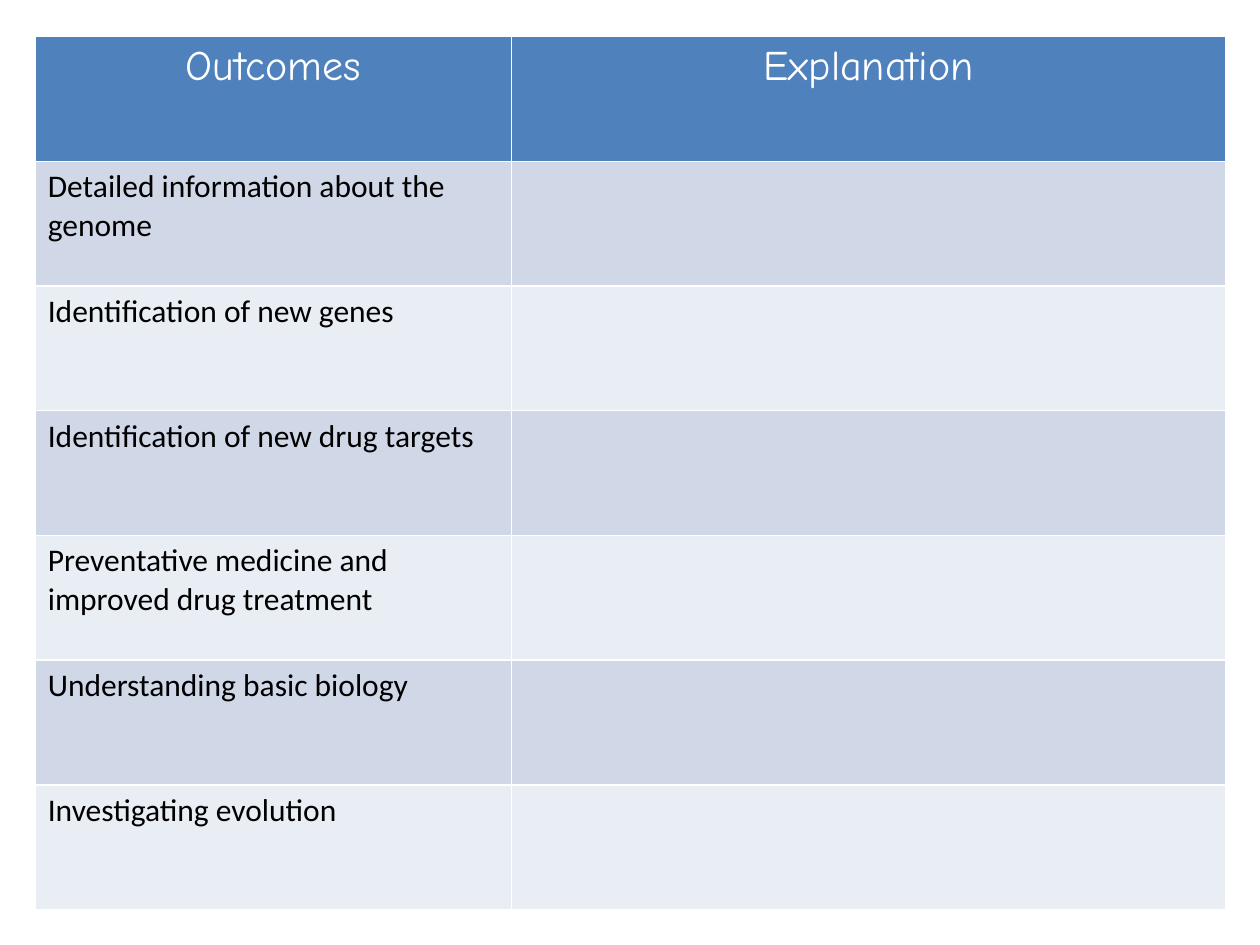
from pptx import Presentation, util as u
from pptx.dml.color import RGBColor
from pptx.enum import text

COLORS = {
    "head": "4F81BD",
    "dark": "D0D8E8",
    "light": "E9EDF4",
    "white": "FFFFFF",
    "black": "000000",
}
HEADS = ["Outcomes", "Explanation"]
OUTCOMES = [
    "Detailed information about the genome",
    "Identification of new genes",
    "Identification of new drug targets",
    "Preventative medicine and improved drug treatment",
    "Understanding basic biology",
    "Investigating evolution",
]
WIDTHS = [3.78, 5.67]
HEIGHT = 0.99

deck = Presentation()
deck.slide_width, deck.slide_height = u.Inches(10), u.Inches(7.5)
slide = deck.slides.add_slide(deck.slide_layouts[6])

rows = [HEADS] + [[outcome, ""] for outcome in OUTCOMES]
table = slide.shapes.add_table(
    len(rows), len(WIDTHS), u.Inches(0.28), u.Inches(0.29),
    u.Inches(sum(WIDTHS)), u.Inches(HEIGHT * len(rows))).table
for col, width in zip(table.columns, WIDTHS):
    col.width = u.Inches(width)

for r, row in enumerate(rows):
    table.rows[r].height = u.Inches(HEIGHT)
    head = r == 0
    fill = "head" if head else "dark" if r % 2 else "light"
    for c, words in enumerate(row):
        cell = table.cell(r, c)
        cell.fill.solid()
        cell.fill.fore_color.rgb = RGBColor.from_string(COLORS[fill])
        cell.text = words
        para = cell.text_frame.paragraphs[0]
        para.alignment = text.PP_ALIGN.CENTER if head else text.PP_ALIGN.LEFT
        font = para.font
        font.name = "Comic Neue" if head else "Calibri"
        font.size = u.Pt(24 if head else 18)
        font.bold = False
        font.color.rgb = RGBColor.from_string(COLORS["white" if head else "black"])

deck.save("out.pptx")
